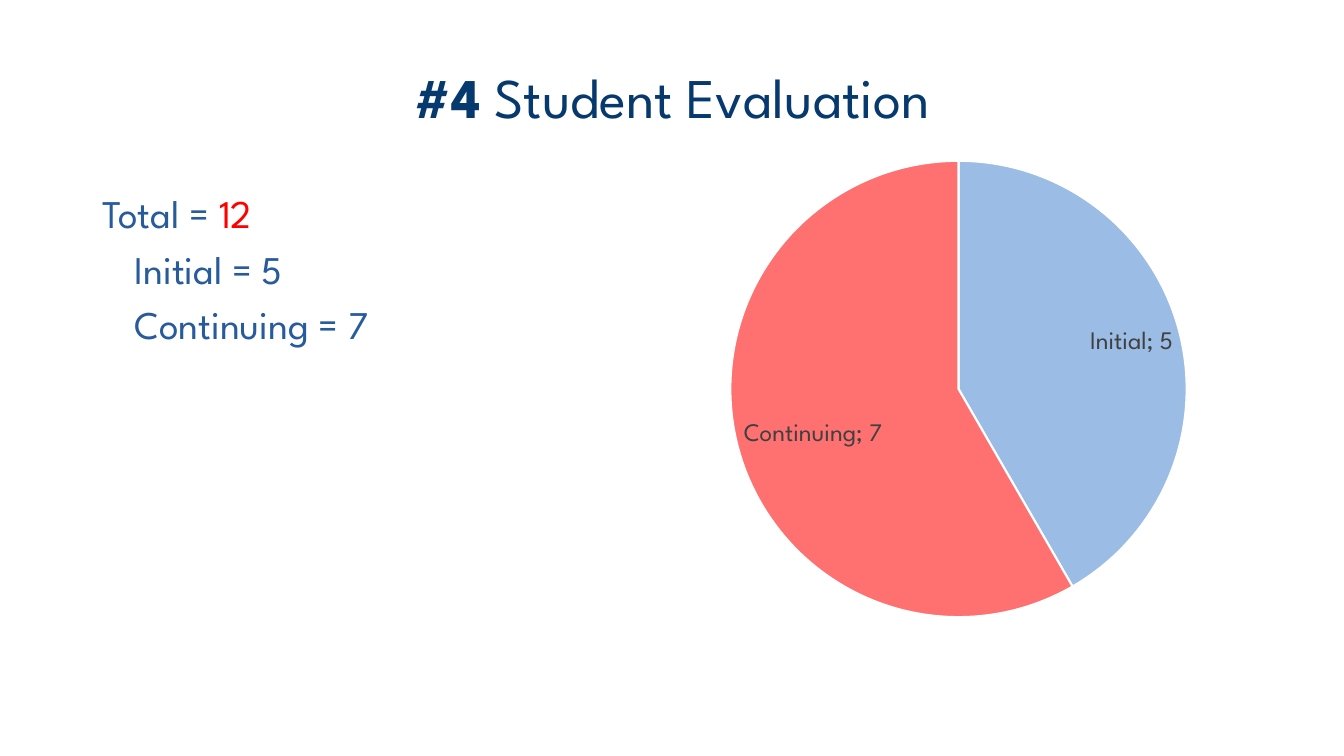
from dataclasses import dataclass

from lxml.etree import SubElement
from pptx import Presentation
from pptx.chart.data import CategoryChartData
from pptx.dml.color import RGBColor
from pptx.enum.chart import XL_CHART_TYPE, XL_LABEL_POSITION
from pptx.enum.text import MSO_ANCHOR, PP_ALIGN
from pptx.oxml.ns import qn
from pptx.util import Pt

HEADING = [("#4", "title", True), (" Student Evaluation", "title", False)]
EVALUATIONS = {"Initial": 5, "Continuing": 7}
SLICE_COLOURS = ["initial", "continuing"]

# Each summary line: left indent in points, then its runs
SUMMARY = [(18, [("Total = ", "body", False),
                 (str(sum(EVALUATIONS.values())), "total", False)])]
SUMMARY += [(41, [(f"{kind} = {count}", "body", False)])
            for kind, count in EVALUATIONS.items()]

# left, top, width, height in points
HEADING_AREA = (48, 34, 864, 70)
SUMMARY_AREA = (48, 132, 384, 332)
CHART_AREA = (432, 104.4, 505.4, 347)
PIE_DIAMETER = 326


@dataclass(frozen=True)
class Theme:
    font: str = "League Spartan"
    title: str = "06396D"
    body: str = "285B9C"
    total: str = "FF0000"
    initial: str = "9BBCE5"
    continuing: str = "FF7070"
    label: str = "404040"
    border: str = "FFFFFF"
    title_size: int = 40
    body_size: int = 28
    label_size: int = 18

    def rgb(self, role):
        return RGBColor.from_string(getattr(self, role))


THEME = Theme()


def style_font(font, size, role):
    font.name = THEME.font
    font.size = Pt(size)
    font.color.rgb = THEME.rgb(role)


def add_text_frame(slide, area, anchor):
    frame = slide.shapes.add_textbox(*map(Pt, area)).text_frame
    frame.word_wrap = True
    frame.vertical_anchor = anchor
    return frame


def add_runs(paragraph, runs, size):
    for words, role, bold in runs:
        run = paragraph.add_run()
        run.text = words
        style_font(run.font, size, role)
        run.font.bold = bold


def add_heading(slide):
    heading = add_text_frame(slide, HEADING_AREA, MSO_ANCHOR.MIDDLE).paragraphs[0]
    heading.alignment = PP_ALIGN.CENTER
    add_runs(heading, HEADING, THEME.title_size)


def add_summary(slide):
    frame = add_text_frame(slide, SUMMARY_AREA, MSO_ANCHOR.TOP)
    for position, (indent, runs) in enumerate(SUMMARY):
        line = frame.add_paragraph() if position else frame.paragraphs[0]
        line._p.get_or_add_pPr().set("marL", str(Pt(indent)))
        if position:
            line.space_before = Pt(6)
        add_runs(line, runs, THEME.body_size)


def centre_pie(chart):
    """Fix the pie's diameter and centre it in the chart area."""
    plot_area = chart._chartSpace.chart.plotArea
    layout = plot_area.find(qn("c:layout"))
    if layout is None:
        layout = SubElement(plot_area, qn("c:layout"))
        plot_area.insert(0, layout)
    manual = SubElement(layout, qn("c:manualLayout"))
    width, height = (PIE_DIAMETER / side for side in CHART_AREA[2:])
    settings = {"layoutTarget": "inner", "xMode": "edge", "yMode": "edge",
                "x": (1 - width) / 2, "y": (1 - height) / 2,
                "w": width, "h": height}
    for tag, setting in settings.items():
        SubElement(manual, qn(f"c:{tag}")).set("val", str(setting))


def add_pie(slide):
    counts = CategoryChartData()
    counts.categories = list(EVALUATIONS)
    counts.add_series("Evaluations", list(EVALUATIONS.values()))
    chart = slide.shapes.add_chart(
        XL_CHART_TYPE.PIE, *map(Pt, CHART_AREA), counts).chart
    chart.has_title = False
    chart.has_legend = False
    style_font(chart.font, THEME.label_size, "label")

    pie = chart.plots[0]
    pie.vary_by_categories = True
    for position, role in enumerate(SLICE_COLOURS):
        wedge = pie.series[0].points[position].format
        wedge.fill.solid()
        wedge.fill.fore_color.rgb = THEME.rgb(role)
        wedge.line.color.rgb = THEME.rgb("border")
        wedge.line.width = Pt(1.5)

    labels = pie.series[0].data_labels
    labels.show_category_name = True
    labels.show_value = True
    labels.show_percentage = False
    labels.position = XL_LABEL_POSITION.INSIDE_END
    style_font(labels.font, THEME.label_size, "label")
    SubElement(labels._element, qn("c:separator")).text = "; "
    separator = labels._element.find(qn("c:separator"))
    labels._element.find(qn("c:showBubbleSize")).addnext(separator)
    centre_pie(chart)


def main():
    deck = Presentation()
    deck.slide_width, deck.slide_height = Pt(960), Pt(540)
    slide = deck.slides.add_slide(deck.slide_layouts[6])
    add_heading(slide)
    add_summary(slide)
    add_pie(slide)
    deck.save("out.pptx")


if __name__ == "__main__":
    main()
